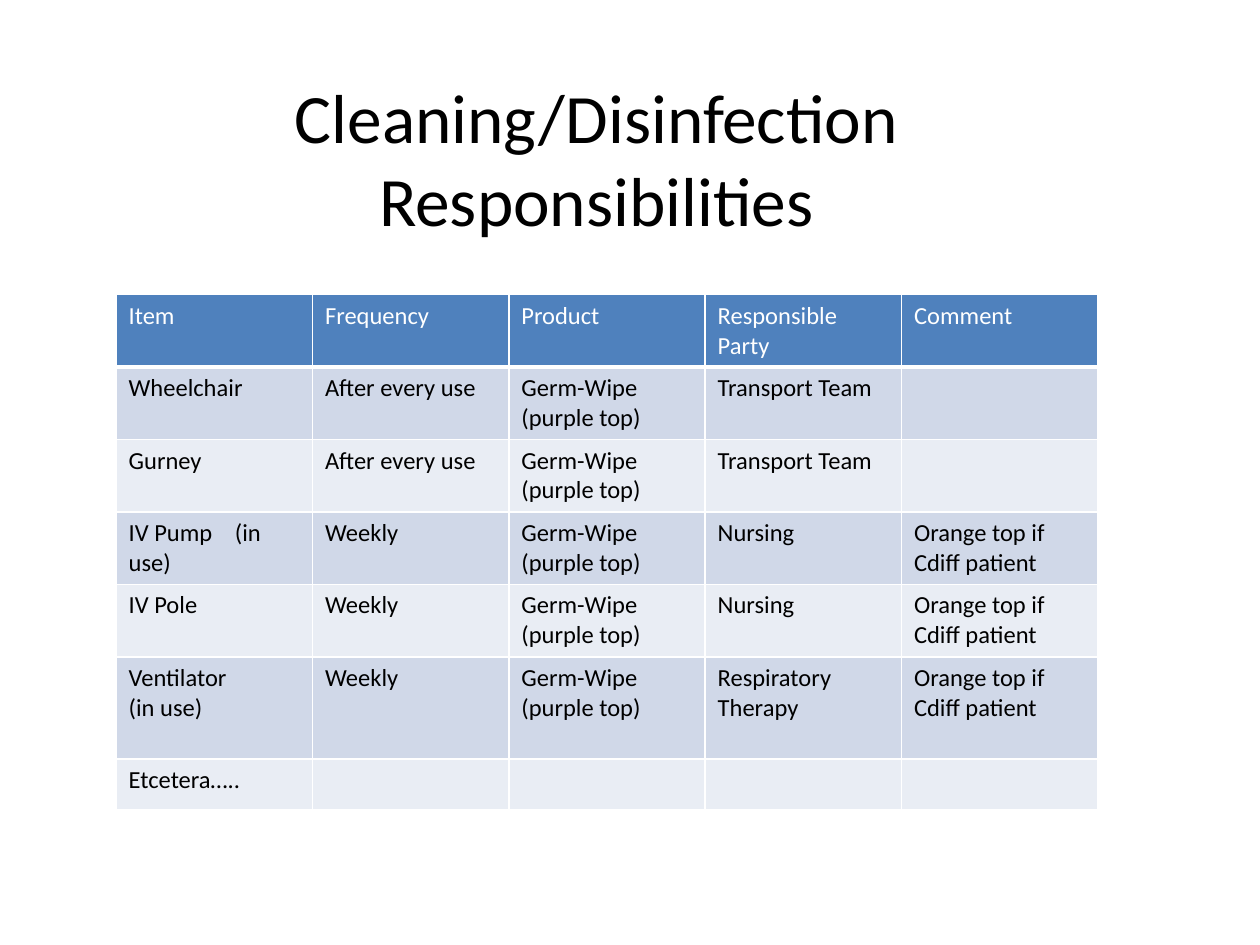
from lxml.etree import SubElement
from pptx import Presentation
from pptx.dml.color import RGBColor
from pptx.enum.text import MSO_ANCHOR, PP_ALIGN
from pptx.oxml.ns import qn
from pptx.util import Cm, Pt

WHITE, BLACK = "FFFFFF", "000000"
HEADER_FILL = "4F81BD"
BAND_FILLS = ("D0D8E8", "E9EDF4")
TAB_STOP = Cm(2.14)

WIPE = "Germ-Wipe (purple top)"
ORANGE = "Orange top if Cdiff patient"
DUTIES = [
    ("Item", "Frequency", "Product", "Responsible Party", "Comment"),
    ("Wheelchair", "After every use", WIPE, "Transport Team", ""),
    ("Gurney", "After every use", WIPE, "Transport Team", ""),
    ("IV Pump\t(in use)", "Weekly", WIPE, "Nursing", ORANGE),
    ("IV Pole", "Weekly", "Germ-Wipe\n(purple top)", "Nursing", ORANGE),
    ("Ventilator\n(in use)", "Weekly", WIPE, "Respiratory Therapy", ORANGE),
    ("Etcetera…..", "", "", "", ""),
]
ROW_HEIGHTS = [1.46] * 5 + [2.06, 1.03]


def rgb(value):
    return RGBColor.from_string(value)


def format_font(font, size, color):
    font.color.rgb = rgb(color)
    for name, value in {"name": "Calibri", "size": Pt(size), "bold": False}.items():
        setattr(font, name, value)


def add_title(slide, left, top, width, height):
    title = slide.shapes.add_textbox(left, top, width, height)
    frame = title.text_frame
    for name, value in {"word_wrap": True, "vertical_anchor": MSO_ANCHOR.MIDDLE}.items():
        setattr(frame, name, value)
    heading = frame.paragraphs[0]
    heading.text = "Cleaning/Disinfection Responsibilities"
    heading.alignment = PP_ALIGN.CENTER
    format_font(heading.font, 39.6, BLACK)


def add_borders(cell, widths):
    """Draw white borders; widths maps the sides L, R, T, B to points."""
    properties = cell._tc.get_or_add_tcPr()
    for side, width in widths.items():
        line = SubElement(properties, qn(f"a:ln{side}"), w=str(Pt(width)))
        SubElement(SubElement(line, qn("a:solidFill")), qn("a:srgbClr"), val=WHITE)


def add_tab_stop(paragraph):
    tabs = SubElement(paragraph._p.get_or_add_pPr(), qn("a:tabLst"))
    SubElement(tabs, qn("a:tab"), pos=str(TAB_STOP), algn="l")


def fill_cell(cell, text, fill, color, bottom_border):
    add_borders(cell, {"L": 1, "R": 1, "T": 1, "B": bottom_border})
    cell.fill.solid()
    cell.fill.fore_color.rgb = rgb(fill)
    cell.text = text
    for paragraph in cell.text_frame.paragraphs:
        if "\t" in text:
            add_tab_stop(paragraph)
        format_font(paragraph.font, 14, color)


def add_duty_table(slide, left, top, width):
    columns = len(DUTIES[0])
    height = Cm(sum(ROW_HEIGHTS))
    table = slide.shapes.add_table(len(DUTIES), columns, left, top, width, height).table
    table.horz_banding = False
    for column in table.columns:
        column.width = width // columns
    for index, (duty, row_height) in enumerate(zip(DUTIES, ROW_HEIGHTS)):
        table.rows[index].height = Cm(row_height)
        if index == 0:
            look = (HEADER_FILL, WHITE, 3)
        else:
            look = (BAND_FILLS[(index - 1) % 2], BLACK, 1)
        for cell, text in zip(table.rows[index].cells, duty):
            fill_cell(cell, text, *look)


def main():
    deck = Presentation()
    deck.slide_width, deck.slide_height = Cm(25.4), Cm(19.05)
    slide = deck.slides.add_slide(deck.slide_layouts[6])
    add_title(slide, Cm(1.47), Cm(1.88), Cm(21.11), Cm(2.57))
    add_duty_table(slide, Cm(2.34), Cm(5.94), Cm(19.79))
    deck.save("out.pptx")


if __name__ == "__main__":
    main()
